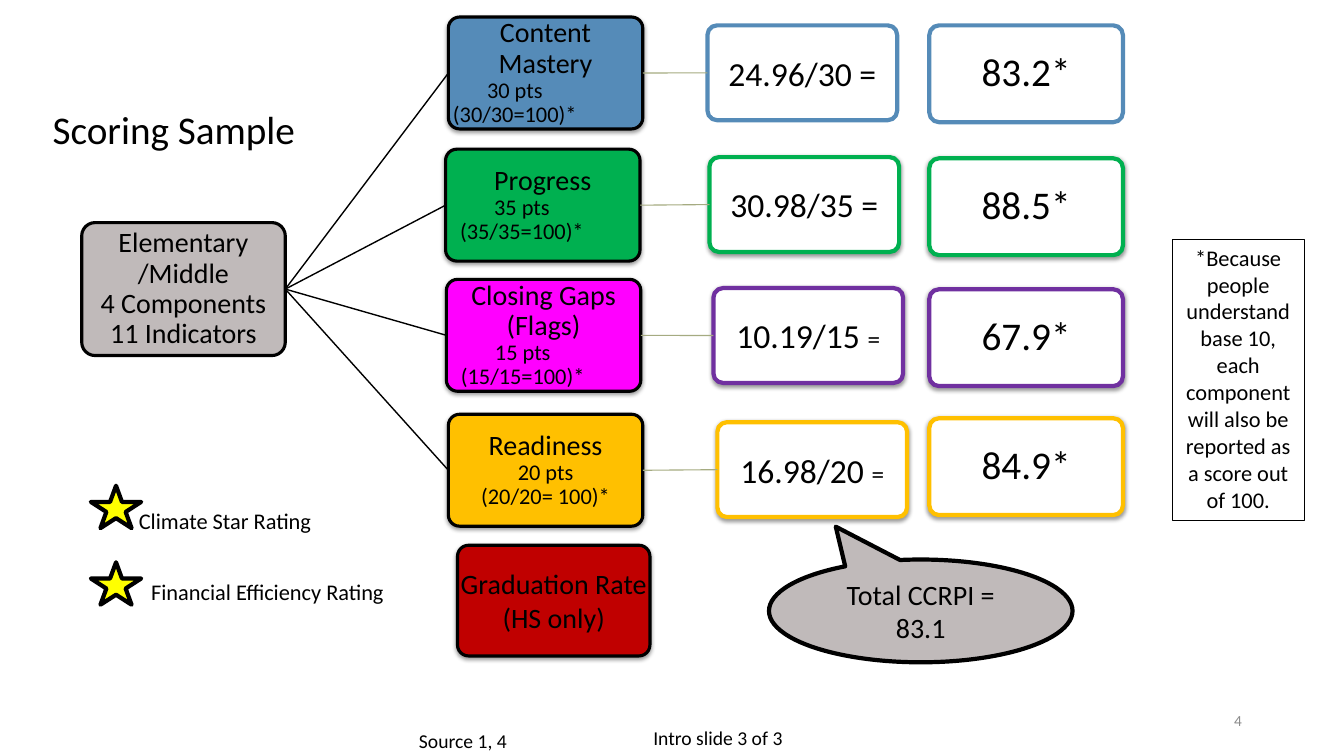
from lxml import etree
from pptx import Presentation
from pptx.dml.color import RGBColor
from pptx.enum.shapes import MSO_CONNECTOR, MSO_SHAPE
from pptx.enum.text import MSO_ANCHOR, PP_ALIGN
from pptx.oxml import parse_xml
from pptx.oxml.ns import nsdecls, qn
from pptx.util import Cm, Pt

ROUNDED = MSO_SHAPE.ROUNDED_RECTANGLE
RECTANGLE = MSO_SHAPE.RECTANGLE
STAR = MSO_SHAPE.STAR_5_POINT
CALLOUT = MSO_SHAPE.OVAL_CALLOUT
STRAIGHT = MSO_CONNECTOR.STRAIGHT
TOP, MIDDLE = MSO_ANCHOR.TOP, MSO_ANCHOR.MIDDLE
LEFT, CENTER, RIGHT = PP_ALIGN.LEFT, PP_ALIGN.CENTER, PP_ALIGN.RIGHT
LEFT_SITE, RIGHT_SITE = 1, 3


class Theme:
    font = "Calibri"
    black, white, muted = "000000", "FFFFFF", "8C8C8C"
    gray, yellow, red, link = "C0BABA", "FFFF00", "C00000", "A5AB81"
    blue, green, magenta = "558BB8", "00B050", "FF00FF"
    purple, amber = "7030A0", "FFC000"
    title, score, heading, equals = 28, 24, 20, 18
    detail, footer, number = 16, 14, 11


def draw(kind, frame, fill=None, line=None, weight=1, shadow=False):
    shape = page.shapes.add_shape(kind, *[Cm(length) for length in frame])
    shape.shadow.inherit = False
    if kind == ROUNDED:
        shape.adjustments[0] = 0.1
    if fill:
        shape.fill.solid()
        shape.fill.fore_color.rgb = RGBColor.from_string(fill)
    else:
        shape.fill.background()
    if line:
        shape.line.color.rgb = RGBColor.from_string(line)
        shape.line.width = Pt(weight)
    else:
        shape.line.fill.background()
    if shadow:
        effects = shape._element.spPr.find(qn("a:effectLst"))
        effects.append(parse_xml(
            f'<a:outerShdw {nsdecls("a")} blurRad="{Pt(3)}" dist="{Pt(1.4)}" '
            f'dir="5400000" rotWithShape="0"><a:srgbClr val="{Theme.black}">'
            '<a:alpha val="40000"/></a:srgbClr></a:outerShdw>'))
    return shape


def write(shape, paragraphs, align=CENTER, anchor=MIDDLE, inset=None,
          spacing=None, color=Theme.black):
    frame = shape.text_frame
    frame.word_wrap = True
    frame.vertical_anchor = anchor
    if inset is not None:
        frame.margin_left = frame.margin_right = Cm(inset)
        frame.margin_top = frame.margin_bottom = Cm(inset)
    for index, spans in enumerate(paragraphs):
        para = frame.add_paragraph() if index else frame.paragraphs[0]
        para.alignment = align
        if spacing:
            para.line_spacing = spacing
        for text, size in spans:
            span = para.add_run()
            span.text = text
            span.font.name = Theme.font
            span.font.size = Pt(size)
            span.font.color.rgb = RGBColor.from_string(color)


deck = Presentation()
deck.slide_width, deck.slide_height = Cm(33.87), Cm(19.05)
page = deck.slides.add_slide(deck.slide_layouts[6])

school = draw(ROUNDED, (2.06, 5.61, 5.13, 3.35), Theme.gray, Theme.black, 2.25)
write(school, [[(text, Theme.heading)] for text in
               ("Elementary /Middle", "4 Components", "11 Indicators")],
      inset=0.03, spacing=0.9)

components = [
    ("Content Mastery", "30 pts", "(30/30=100)*", 1.55, Theme.blue, Theme.blue,
     (11.3, 0.43), "24.96/30 ", Theme.score, (17.83, 0.64), "83.2*", 0.64),
    ("Progress", "35 pts", "(35/35=100)*", 1.05, Theme.green, Theme.green,
     (11.23, 3.76), "30.98/35 ", Theme.score, (17.88, 3.96), "88.5*", 3.99),
    ("Closing Gaps (Flags)", "15 pts", "(15/15=100)*", 1.05, Theme.magenta, Theme.purple,
     (11.25, 7.04), "10.19/15 ", Theme.equals, (17.98, 7.26), "67.9*", 7.29),
    ("Readiness", "20 pts", "(20/20= 100)*", 0, Theme.amber, Theme.amber,
     (11.3, 10.44), "16.98/20 ", Theme.equals, (18.08, 10.64), "84.9*", 10.54),
]
for (name, points, ratio, indent, fill, outline, corner, earned, equals_size,
     earned_corner, percent, percent_top) in components:
    raised = name != "Content Mastery"
    component = draw(ROUNDED, (*corner, 4.9, 2.82), fill, Theme.black, 2.25, True)
    write(component, [[(name, Theme.heading)], [(points, Theme.detail)],
                      [(ratio, Theme.detail)]], inset=0.03, spacing=0.9)
    points_para = component.text_frame.paragraphs[1]
    points_para._p.get_or_add_pPr().set("marR", str(Cm(indent)))

    earned_box = draw(ROUNDED, (*earned_corner, 4.78, 2.39), Theme.white, outline, 3, raised)
    write(earned_box, [[(earned, Theme.score), ("=", equals_size)]], inset=0.05)
    percent_box = draw(ROUNDED, (23.42, percent_top, 4.88, 2.44), Theme.white, outline, 3, raised)
    write(percent_box, [[(percent, Theme.title)]], inset=0.05, spacing=0.9)

    for start, end, color, weight in ((school, component, Theme.black, 1),
                                      (component, earned_box, Theme.link, 0.79)):
        connector = page.shapes.add_connector(STRAIGHT, 0, 0, 0, 0)
        connector.begin_connect(start, RIGHT_SITE)
        connector.end_connect(end, LEFT_SITE)
        connector.line.color.rgb = RGBColor.from_string(color)
        connector.line.width = Pt(weight)
        etree.SubElement(connector._element.spPr, qn("a:effectLst"))

graduation = draw(ROUNDED, (11.53, 13.74, 4.85, 2.79), Theme.red, Theme.black, 2.25, True)
write(graduation, [[("Graduation Rate", Theme.heading)], [("(HS only)", Theme.heading)]],
      inset=0)
graduation.text_frame.word_wrap = False

total = draw(CALLOUT, (19.38, 14.1, 7.65, 2.59), Theme.gray, Theme.black, 3)
total.adjustments[0], total.adjustments[1] = -0.28, -0.82
write(total, [[("Total CCRPI = 83.1", Theme.heading)]])

for star_top in (12.24, 14.17):
    draw(STAR, (2.29, star_top, 1.27, 1.07), Theme.yellow, Theme.black, 3)

note = draw(RECTANGLE, (29.54, 6.02, 3.33, 7.09), line=Theme.black, weight=0.25)
write(note, [[("*Because people understand base 10, each component will also be "
               "reported as a score out of 100.", Theme.detail)]], anchor=TOP)

labels = [
    ("Scoring Sample", (0.99, 2.29, 6.78, 1.93), Theme.title, CENTER, MIDDLE, Theme.black),
    ("Climate Star Rating", (3.25, 12.65, 5.79, 0.94), Theme.detail, LEFT, TOP, Theme.black),
    ("Financial Efficiency Rating", (3.56, 14.45, 6.8, 0.94), Theme.detail, LEFT, TOP, Theme.black),
    ("Source 1, 4", (10.31, 18.24, 3.96, 0.8), Theme.footer, LEFT, TOP, Theme.black),
    ("Intro slide 3 of 3", (16.15, 18.16, 3.89, 0.8), Theme.footer, CENTER, TOP, Theme.black),
    ("4", (23.93, 17.65, 7.62, 1.02), Theme.number, RIGHT, MIDDLE, Theme.muted),
]
for text, frame, size, align, anchor, color in labels:
    box = page.shapes.add_textbox(*[Cm(length) for length in frame])
    write(box, [[(text, size)]], align, anchor, color=color)

deck.save("out.pptx")
